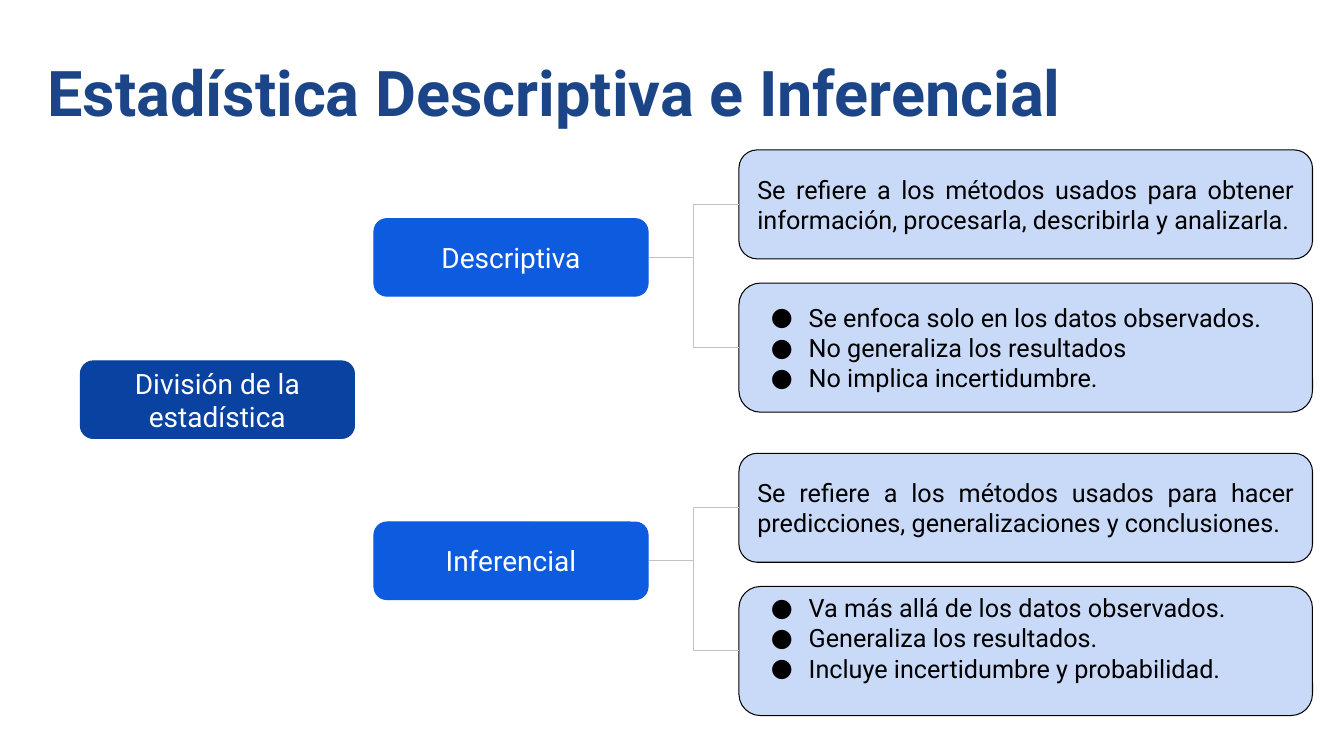
from dataclasses import dataclass

from lxml.etree import SubElement
from pptx import Presentation
from pptx.dml.color import RGBColor
from pptx.enum.shapes import MSO_CONNECTOR, MSO_SHAPE
from pptx.enum.text import MSO_ANCHOR, MSO_AUTO_SIZE, PP_ALIGN
from pptx.oxml.ns import qn
from pptx.slide import Slide
from pptx.text.text import TextFrame
from pptx.util import Pt

FONT = "Roboto"
PAD = 9.36
NODE_W, NODE_H = 195.8, 55.4
NODE_X, BOX_X = 267.1, 527.8
BOX_W = 409.7
STEP = 216.7
BLUE, DARK, PALE = "0D5CDF", "0942A1", "C9DAF8"


@dataclass
class Box:
    left: float
    top: float
    width: float
    height: float
    lines: list[str]
    fill: str
    edge: str
    size: float
    ink: str
    align: PP_ALIGN
    bullet: bool = False
    lift: float = 0


@dataclass
class Branch:
    name: str
    about: str
    points: list[str]
    lift: float = 0


def color(code: str) -> RGBColor:
    return RGBColor.from_string(code)


def write(frame: TextFrame, lines: list[str], *, size: float, ink: str,
          align: PP_ALIGN, bold: bool = False, bullet: bool = False,
          anchor: MSO_ANCHOR = MSO_ANCHOR.MIDDLE, pad: float = PAD,
          lift: float = 0) -> None:
    frame.word_wrap = True
    frame.auto_size = MSO_AUTO_SIZE.NONE
    frame.vertical_anchor = anchor
    frame.margin_left = frame.margin_right = Pt(pad)
    frame.margin_top = Pt(pad - lift)
    frame.margin_bottom = Pt(pad + lift)
    for at, line in enumerate(lines):
        para = frame.paragraphs[0] if at == 0 else frame.add_paragraph()
        para.alignment = align
        if bullet:
            props = para._p.get_or_add_pPr()
            props.set("marL", str(Pt(36)))
            props.set("indent", str(-Pt(27)))
            tint = SubElement(props, qn("a:buClr"))
            SubElement(tint, qn("a:srgbClr"), val=ink)
            SubElement(props, qn("a:buFont"), typeface=FONT)
            SubElement(props, qn("a:buChar"), char="●")
        run = para.add_run()
        run.text = line
        run.font.name = FONT
        run.font.size = Pt(size)
        run.font.bold = bold
        run.font.color.rgb = color(ink)


def draw(slide: Slide, box: Box) -> None:
    shape = slide.shapes.add_shape(
        MSO_SHAPE.ROUNDED_RECTANGLE,
        Pt(box.left), Pt(box.top), Pt(box.width), Pt(box.height))
    shape.shadow.inherit = False
    shape.fill.solid()
    shape.fill.fore_color.rgb = color(box.fill)
    shape.line.color.rgb = color(box.edge)
    shape.line.width = Pt(0.75)
    write(shape.text_frame, box.lines, size=box.size, ink=box.ink,
          align=box.align, bullet=box.bullet, lift=box.lift)


def node(slide: Slide, text: str, left: float, top: float, fill: str) -> None:
    draw(slide, Box(left, top, NODE_W, NODE_H, [text], fill, fill,
                    20, "FFFFFF", PP_ALIGN.CENTER))


def link(slide: Slide, start: float, end: float) -> None:
    line = slide.shapes.add_connector(
        MSO_CONNECTOR.ELBOW,
        Pt(NODE_X + NODE_W + 0.7), Pt(start), Pt(BOX_X), Pt(end))
    line.line.color.rgb = color("C2C2C2")
    line.line.width = Pt(0.75)
    SubElement(line._element.spPr, qn("a:effectLst"))


def fork(slide: Slide, branch: Branch, shift: float) -> None:
    top = 156.2 + shift
    node(slide, branch.name, NODE_X, top, BLUE)
    boxes = [
        Box(BOX_X, 107.1 + shift, BOX_W, 77.8, [branch.about], PALE,
            "000000", 18, "000000", PP_ALIGN.JUSTIFY),
        Box(BOX_X, 202.2 + shift, BOX_W, 92.2, branch.points, PALE,
            "000000", 18, "000000", PP_ALIGN.JUSTIFY, True, branch.lift),
    ]
    for box in boxes:
        draw(slide, box)
        link(slide, top + NODE_H / 2, box.top + box.height / 2)


def main() -> None:
    deck = Presentation()
    deck.slide_width, deck.slide_height = Pt(960), Pt(540)
    slide = deck.slides.add_slide(deck.slide_layouts[5])
    title = slide.shapes.title
    title.left, title.top = Pt(26.6), Pt(31)
    title.width, title.height = Pt(906.5), Pt(69.1)
    write(title.text_frame, ["Estadística Descriptiva e Inferencial"],
          size=45, ink="1C4587", align=PP_ALIGN.LEFT, bold=True,
          anchor=MSO_ANCHOR.TOP, pad=7.2)
    node(slide, "División de la estadística", 57.4, 257.8, DARK)
    branches = [
        Branch("Descriptiva",
               "Se refiere a los métodos usados para obtener información, "
               "procesarla, describirla y analizarla.",
               ["Se enfoca solo en los datos observados.",
                "No generaliza los resultados",
                "No implica incertidumbre."]),
        Branch("Inferencial",
               "Se refiere a los métodos usados para hacer predicciones, "
               "generalizaciones y conclusiones.",
               ["Va más allá de los datos observados.",
                "Generaliza los resultados.",
                "Incluye incertidumbre y probabilidad."], PAD),
    ]
    for at, branch in enumerate(branches):
        fork(slide, branch, at * STEP)
    deck.save("out.pptx")


if __name__ == "__main__":
    main()
